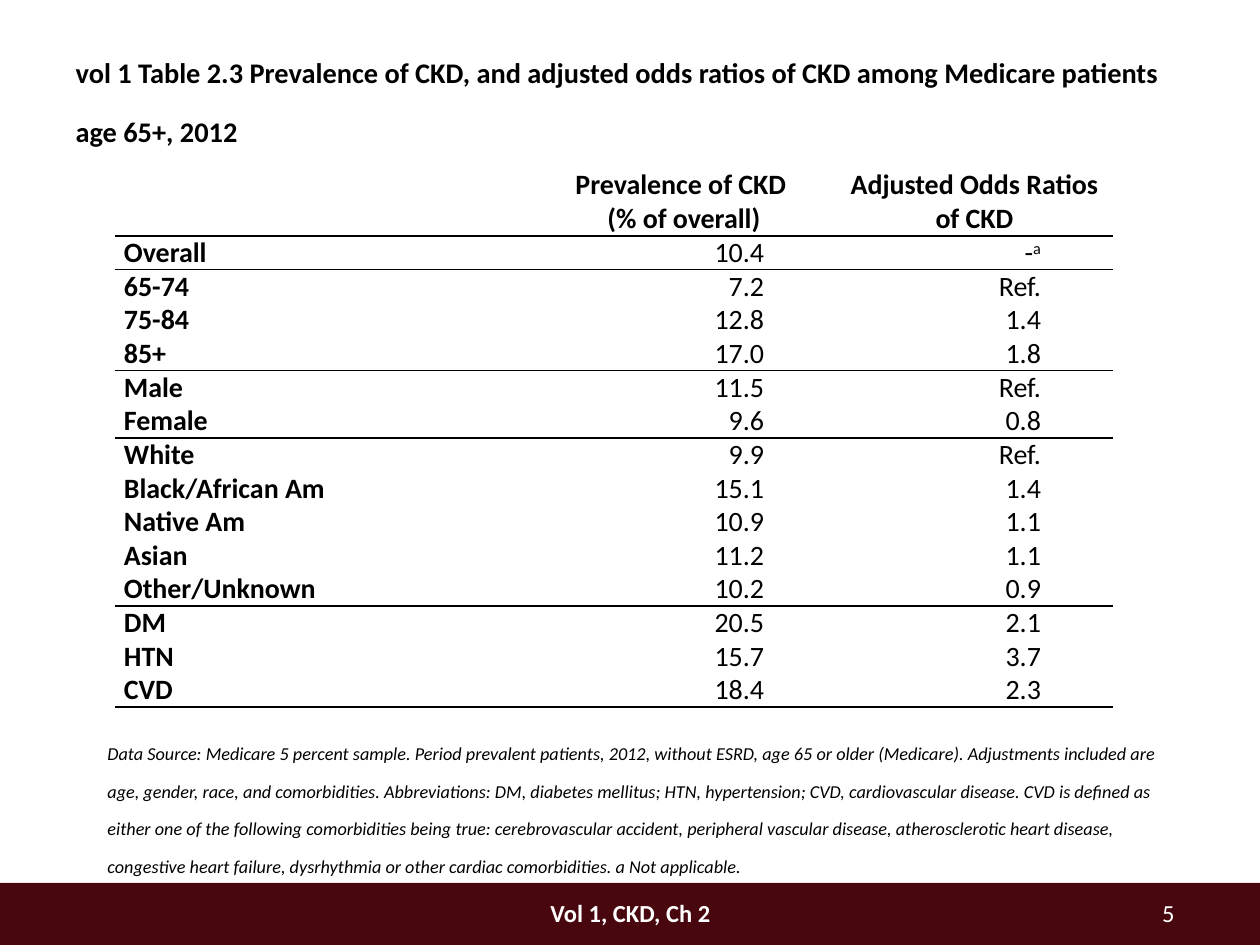
from dataclasses import dataclass

from lxml import etree
from pptx import Presentation
from pptx.dml.color import RGBColor
from pptx.enum.shapes import MSO_SHAPE
from pptx.enum.text import MSO_ANCHOR, MSO_AUTO_SIZE, PP_ALIGN
from pptx.oxml.ns import qn
from pptx.util import Emu, Pt

LEFT, CENTER, RIGHT = PP_ALIGN.LEFT, PP_ALIGN.CENTER, PP_ALIGN.RIGHT
TOP, MIDDLE = MSO_ANCHOR.TOP, MSO_ANCHOR.MIDDLE
RECTANGLE = MSO_SHAPE.RECTANGLE
GROW = MSO_AUTO_SIZE.SHAPE_TO_FIT_TEXT

EMU_PER_PX = 914400 / 126
SUPERSCRIPT = "30000"
PLAIN_TABLE_STYLE = "{2D5ABB26-0587-4C30-8999-92F81FD0307C}"


@dataclass(frozen=True)
class Theme:
    font: str = "Calibri"
    ink: str = "000000"
    band: str = "48070E"
    on_band: str = "FFFFFF"
    title: int = 28
    note: int = 18
    cell: int = 16
    footer: int = 14


THEME = Theme()

TITLE = ("vol 1 Table 2.3 Prevalence of CKD, and adjusted odds ratios of CKD "
         "among Medicare patients age 65+, 2012")
HEADERS = ["", "Prevalence of CKD \n(% of overall)", "Adjusted Odds Ratios of CKD"]
NOT_APPLICABLE = "-"
# A rule is drawn below each group
GROUPS = [
    [("Overall", "10.4", NOT_APPLICABLE)],
    [("65-74", "7.2", "Ref."), ("75-84", "12.8", "1.4"), ("85+", "17.0", "1.8")],
    [("Male", "11.5", "Ref."), ("Female", "9.6", "0.8")],
    [("White", "9.9", "Ref."), ("Black/African Am", "15.1", "1.4"),
     ("Native Am", "10.9", "1.1"), ("Asian", "11.2", "1.1"),
     ("Other/Unknown", "10.2", "0.9")],
    [("DM", "20.5", "2.1"), ("HTN", "15.7", "3.7"), ("CVD", "18.4", "2.3")],
]
NOTE = ("Data Source: Medicare 5 percent sample. Period prevalent patients, 2012, "
        "without ESRD, age 65 or older (Medicare). Adjustments included are age, "
        "gender, race, and comorbidities. Abbreviations: DM, diabetes mellitus; HTN, "
        "hypertension; CVD, cardiovascular disease. CVD is defined as either one of "
        "the following comorbidities being true: cerebrovascular accident, peripheral "
        "vascular disease, atherosclerotic heart disease, congestive heart failure, "
        "dysrhythmia or other cardiac comorbidities. a Not applicable.")


def px(length):
    return Emu(round(length * EMU_PER_PX))


def write(frame, text, size, color=THEME.ink, bold=False, italic=False,
          align=LEFT, raised=False):
    """Append text to the frame's first paragraph; newlines become line breaks."""
    paragraph = frame.paragraphs[0]
    paragraph.alignment = align
    for number, line in enumerate(text.split("\n")):
        if number:
            paragraph.add_line_break()
        run = paragraph.add_run()
        run.text = line
        font = run.font
        font.name, font.size = THEME.font, Pt(size)
        font.bold, font.italic = bold, italic
        font.color.rgb = RGBColor.from_string(color)
        if raised:
            run._r.get_or_add_rPr().set("baseline", SUPERSCRIPT)


class SlideBuilder:
    def __init__(self, slide, theme):
        self.slide, self.theme = slide, theme

    def title(self, box, text):
        heading = self.slide.shapes.title
        heading.left, heading.top, heading.width, heading.height = map(px, box)
        frame = heading.text_frame
        frame.vertical_anchor, frame.auto_size = TOP, GROW
        write(frame, text, self.theme.title, bold=True, raised=True)

    def band(self, box):
        bar = self.slide.shapes.add_shape(RECTANGLE, *map(px, box))
        bar.shadow.inherit = False
        bar.fill.solid()
        bar.fill.fore_color.rgb = RGBColor.from_string(self.theme.band)
        bar.line.fill.background()

    def text(self, box, text, size, **style):
        frame = self.slide.shapes.add_textbox(*map(px, box)).text_frame
        frame.word_wrap = True
        write(frame, text, size, **style)

    def table(self, left, top, widths, heights):
        frame = self.slide.shapes.add_table(
            len(heights), len(widths),
            *map(px, (left, top, sum(widths), sum(heights))))
        table = frame.table
        table.first_row = table.horz_banding = False
        table._tbl.tblPr.find(qn("a:tableStyleId")).text = PLAIN_TABLE_STYLE
        for column, width in zip(table.columns, widths):
            column.width = px(width)
        for row, height in zip(table.rows, heights):
            row.height = px(height)
        return table

    def cell(self, cell, text, ruled=False, right_inset=9, **style):
        cell.margin_left, cell.margin_right = px(9), px(right_inset)
        cell.margin_top = cell.margin_bottom = 0
        cell.vertical_anchor = MIDDLE
        cell.fill.background()
        if text:
            write(cell.text_frame, text, self.theme.cell, **style)
        if ruled:
            self.rule_below(cell)

    def rule_below(self, cell):
        line = etree.Element(qn("a:lnB"), w=str(Pt(1)))
        fill = etree.SubElement(line, qn("a:solidFill"))
        etree.SubElement(fill, qn("a:srgbClr"), val=self.theme.ink)
        cell._tc.get_or_add_tcPr().insert(0, line)


def main():
    deck = Presentation()
    deck.slide_width, deck.slide_height = px(1260), px(945)
    page = SlideBuilder(deck.slides.add_slide(deck.slide_layouts[5]), THEME)

    # Footer band, source note and title
    page.band((0, 883, 1260, 62))
    page.text((95, 732, 1092, 140), NOTE, THEME.note, italic=True, raised=True)
    page.title((63, 43, 1124, 92), TITLE)
    page.text((494, 892, 273, 42), "Vol 1, CKD, Ch 2", THEME.footer,
              color=THEME.on_band, bold=True, align=CENTER)
    page.text((1061, 892, 126, 38), "5", THEME.footer,
              color=THEME.on_band, align=RIGHT)

    # Prevalence table
    row_count = sum(map(len, GROUPS))
    table = page.table(115, 168, [417, 304, 277], [68] + [33] * row_count)
    for column, header in enumerate(HEADERS):
        page.cell(table.cell(0, column), header, ruled=True, bold=True, align=CENTER)
    row = 0
    for group in GROUPS:
        for position, (label, *values) in enumerate(group, start=1):
            row += 1
            ruled = position == len(group)
            page.cell(table.cell(row, 0), label, ruled, bold=True)
            for column, value in enumerate(values, start=1):
                cell = table.cell(row, column)
                page.cell(cell, value, ruled, right_inset=72, align=RIGHT)
                if value == NOT_APPLICABLE:
                    write(cell.text_frame, "a", THEME.cell, align=RIGHT, raised=True)

    deck.save("out.pptx")


if __name__ == "__main__":
    main()
